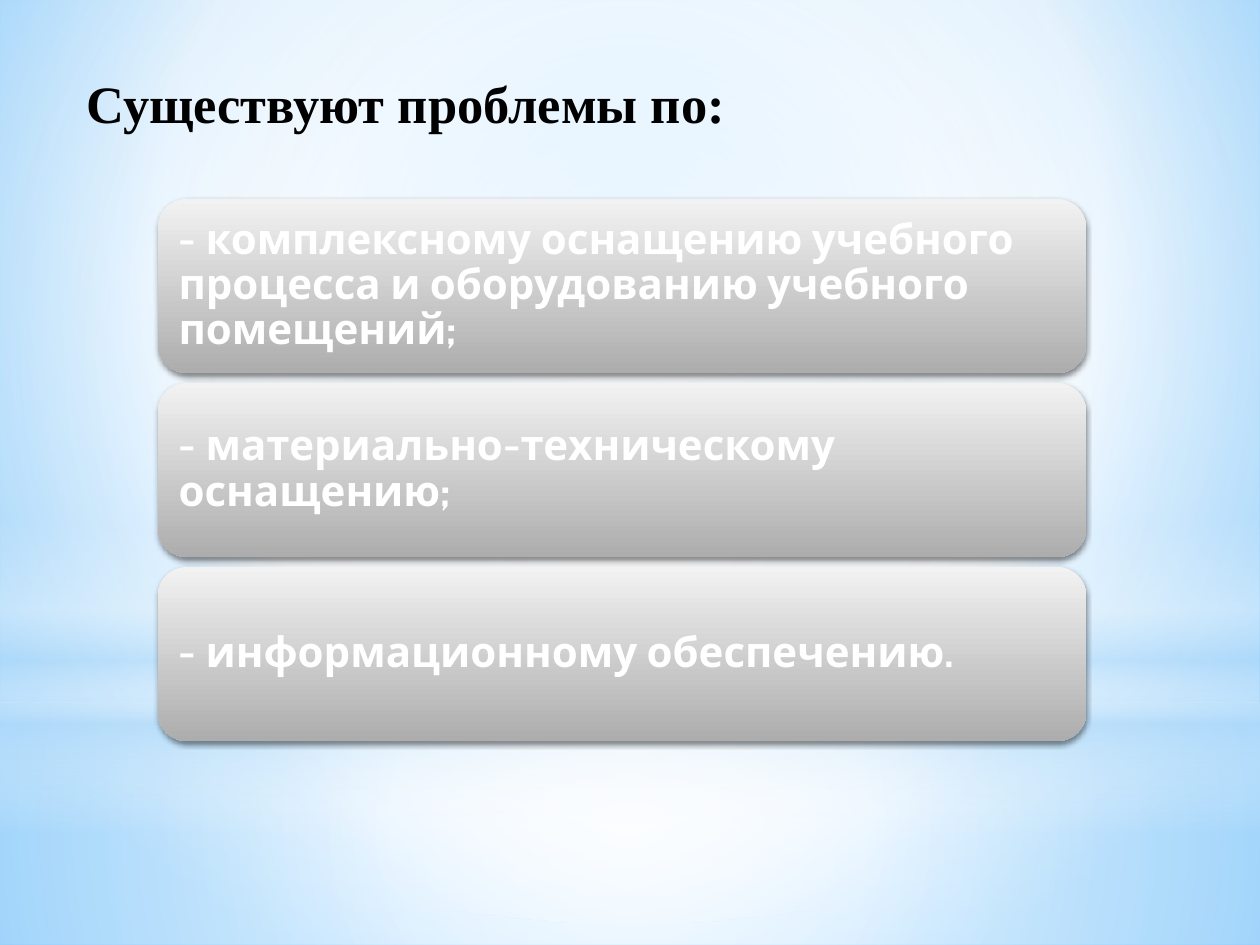
from dataclasses import dataclass

from lxml.etree import SubElement as Sub
from pptx import Presentation
from pptx.dml.color import RGBColor as RGB
from pptx.enum.shapes import MSO_SHAPE as Kind
from pptx.enum.text import MSO_ANCHOR as Anchor, PP_ALIGN as Align
from pptx.oxml.ns import qn
from pptx.util import Cm, Pt


@dataclass(frozen=True)
class Theme:
    head_font: str = "Times New Roman"
    card_font: str = "Cabin"
    head_size: int = 30
    card_size: int = 24
    ink: str = "000000"
    white: str = "FFFFFF"
    mist: str = "B4DCFA"
    sky: str = "9ED5FF"
    deep: str = "5BB9FF"
    light: str = "F2F2F2"
    gray: str = "ADADAD"


T = Theme()
WIDE, HIGH = 25.4, 19.05
CENTER = (50, 50, 50, 50)

TITLE = "Существуют проблемы по:"
ISSUES = (
    "- комплексному оснащению учебного процесса и оборудованию учебного помещений;",
    "- материально-техническому оснащению;",
    "- информационному обеспечению.",
)


def add_color(parent, color, alpha=100):
    node = Sub(parent, qn("a:srgbClr"), val=color)
    if alpha < 100:
        Sub(node, qn("a:alpha"), val=str(alpha * 1000))


def blend(fill, props, stops, focus=None):
    """Fill with (place, colour, opacity) stops: circular around focus, else downward."""
    fill.solid()
    old = props.find(qn("a:solidFill"))
    grad = props.makeelement(qn("a:gradFill"), {"rotWithShape": "1"})
    props.replace(old, grad)
    row = Sub(grad, qn("a:gsLst"))
    for place, *color in stops:
        add_color(Sub(row, qn("a:gs"), pos=str(place * 1000)), *color)
    if focus:
        ring = Sub(grad, qn("a:path"), path="circle")
        sides = {side: str(part * 1000) for side, part in zip("ltrb", focus)}
        Sub(ring, qn("a:fillToRect"), **sides)
    else:
        Sub(grad, qn("a:lin"), ang="5400000", scaled="0")


def add_panel(slide, kind, box, stops, focus=None):
    panel = slide.shapes.add_shape(kind, *map(Cm, box))
    panel.shadow.inherit = False
    panel.line.fill.background()
    blend(panel.fill, panel._element.spPr, stops, focus)
    return panel


def add_shade(shape):
    effects = shape._element.spPr.find(qn("a:effectLst"))
    shade = Sub(effects, qn("a:outerShdw"), blurRad=str(Pt(3.1)), dist=str(Pt(1.8)),
                dir="5400000", algn="ctr", rotWithShape="0")
    add_color(shade, T.ink, 45)


def write(frame, text, font, size, color):
    frame.text = text
    para = frame.paragraphs[0]
    para.alignment = Align.LEFT
    face = para.runs[0].font
    face.name, face.size, face.bold = font, Pt(size), True
    face.color.rgb = RGB.from_string(color)
    return para


def add_sky(slide):
    fill = slide.background.fill
    fill.solid()
    props = next(slide._element.iter(qn("p:bgPr")))
    blend(fill, props, [(0, T.sky), (60, T.white), (100, T.deep)], (20, 10, 20, 60))

    split = 14.17
    add_panel(slide, Kind.RECTANGLE, (0, split, WIDE, HIGH - split),
              [(0, T.white, 91), (37, T.white, 76), (100, T.mist, 79)], CENTER)
    add_panel(slide, Kind.RECTANGLE, (0, 0, WIDE, split),
              [(0, T.white, 89), (48, T.white, 62), (100, T.mist, 79)], CENTER)
    add_panel(slide, Kind.RECTANGLE, (0, 10.46, WIDE, 6.35),
              [(0, T.white, 0), (29, T.white, 30), (45, T.mist, 40),
               (55, T.white, 26), (65, T.mist, 60), (100, T.white, 0)])
    add_panel(slide, Kind.OVAL, (0, 4.45, WIDE, split),
              [(0, T.white), (56, T.white, 0)], CENTER)


def add_card(slide, top, text):
    card = add_panel(slide, Kind.ROUNDED_RECTANGLE, (3.18, top, 18.72, 3.51),
                     [(0, T.light), (100, T.gray)])
    add_shade(card)
    frame = card.text_frame
    frame.word_wrap = True
    frame.vertical_anchor = Anchor.MIDDLE
    frame.margin_left = frame.margin_right = Cm(0.25)
    frame.margin_top = frame.margin_bottom = Cm(0.25)
    para = write(frame, text, T.card_font, T.card_size, T.white)
    para.line_spacing = 0.9


def add_title(slide):
    box = slide.shapes.add_textbox(Cm(1.5), Cm(1.3), Cm(13.51), Cm(1.55))
    box.text_frame.word_wrap = False
    write(box.text_frame, TITLE, T.head_font, T.head_size, T.ink)


def main():
    deck = Presentation()
    deck.slide_width, deck.slide_height = Cm(WIDE), Cm(HIGH)
    slide = deck.slides.add_slide(deck.slide_layouts[6])
    add_sky(slide)
    for row, text in enumerate(ISSUES):
        add_card(slide, 4.01 + row * 3.71, text)
    add_title(slide)
    deck.save("out.pptx")


if __name__ == "__main__":
    main()
